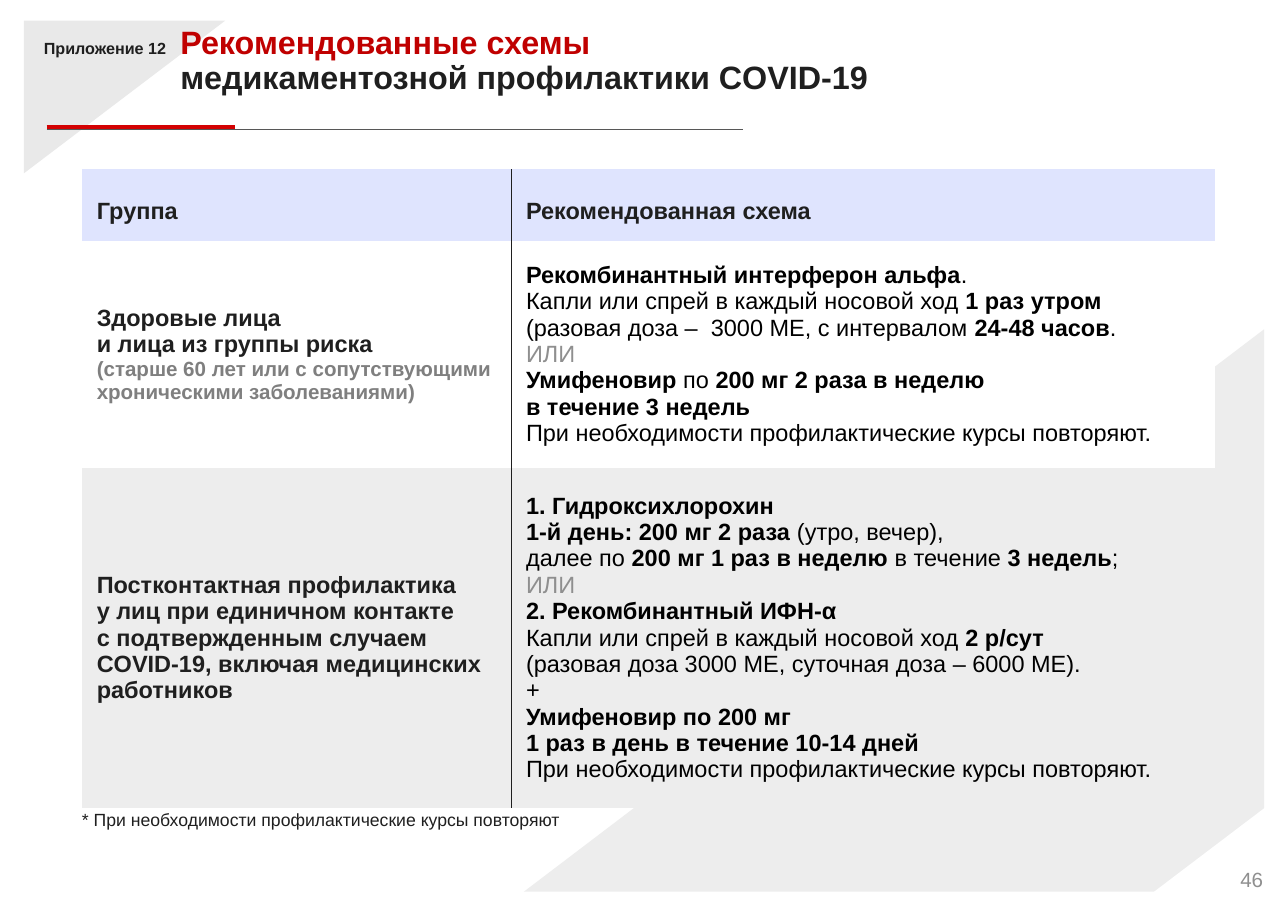
"""Builds the slide with recommended COVID-19 prophylaxis schemes."""
from dataclasses import dataclass

from lxml import etree
from pptx import Presentation
from pptx import util as u
from pptx.dml.color import RGBColor
from pptx.enum import shapes, text
from pptx.oxml.ns import qn


@dataclass(frozen=True)
class Theme:
    font: str = "Arial"
    white: str = "FFFFFF"
    panel: str = "EDEDED"
    corner: str = "E9E9E9"
    header: str = "DFE4FE"
    ink: str = "1F1F1F"
    black: str = "000000"
    muted: str = "8F8F8F"
    note: str = "7F7F7F"
    title: str = "C00000"
    accent: str = "D30102"
    rule: str = "575757"
    title_size: int = 44
    body_size: int = 32
    small_size: int = 28
    footnote_size: int = 24
    label_size: int = 22


THEME = Theme()

STYLES = {
    "title": (THEME.title_size, THEME.title, True),
    "subtitle": (THEME.title_size, THEME.ink, True),
    "label": (THEME.label_size, THEME.ink, True),
    "footnote": (THEME.footnote_size, THEME.ink, False),
    "number": (THEME.small_size, THEME.muted, False),
    "head": (THEME.body_size, THEME.ink, True),
    "note": (THEME.small_size, THEME.note, True),
    "bold": (THEME.body_size, THEME.black, True),
    "plain": (THEME.body_size, THEME.black, False),
    "or": (THEME.body_size, THEME.muted, False),
}

OR = [("ИЛИ", "or")]
REPEAT = [("При необходимости профилактические курсы повторяют.", "plain")]

HEADINGS = ["Группа", "Рекомендованная схема"]

HEALTHY_GROUP = [[
    ("Здоровые лица \nи лица из группы риска \n", "head"),
    ("(старше 60 лет или с сопутствующими хроническими заболеваниями)", "note"),
]]

HEALTHY_SCHEME = [
    [("Рекомбинантный интерферон альфа", "bold"),
     (". \nКапли или спрей в каждый носовой ход ", "plain"),
     ("1 раз утром \n", "bold"),
     ("(разовая доза –  3000 ME, с интервалом ", "plain"),
     ("24-48 часов", "bold"),
     (".", "plain")],
    OR,
    [("Умифеновир", "bold"),
     (" по ", "plain"),
     ("200 мг 2 раза в неделю \nв течение 3 недель", "bold")],
    REPEAT,
]

CONTACT_GROUP = [[
    ("Постконтактная профилактика \nу лиц при единичном контакте \n"
     "с подтвержденным случаем \nCOVID-19, включая медицинских работников", "head"),
]]

CONTACT_SCHEME = [
    [("1. Гидроксихлорохин", "bold")],
    [("1-й день: 200 мг 2 раза ", "bold"), ("(утро, вечер),", "plain")],
    [("далее по ", "plain"),
     ("200 мг 1 раз в неделю ", "bold"),
     ("в течение ", "plain"),
     ("3 недель", "bold"),
     (";", "plain")],
    OR,
    [("2. Рекомбинантный ИФН-α", "bold")],
    [("Капли или спрей в каждый носовой ход ", "plain"),
     ("2 р/сут \n", "bold"),
     ("(разовая доза 3000 ME, суточная доза – 6000 ME).", "plain")],
    [("+", "plain")],
    [("Умифеновир по 200 мг", "bold")],
    [("1 раз в день в течение 10-14 дней", "bold")],
    REPEAT,
]

ROWS = [
    (1.36, THEME.header, [[[(heading, "head")]] for heading in HEADINGS]),
    (4.26, THEME.white, [HEALTHY_GROUP, HEALTHY_SCHEME]),
    (6.4, THEME.panel, [CONTACT_GROUP, CONTACT_SCHEME]),
]


def color(value):
    return RGBColor.from_string(value)


def add_span(para, wording, style):
    size, ink, bold = STYLES[style]
    for index, line in enumerate(wording.split("\n")):
        if index:
            para.add_line_break()
        if line:
            span = para.add_run()
            span.text = line
            span.font.name = THEME.font
            span.font.size = u.Pt(size)
            span.font.bold = bold
            span.font.color.rgb = color(ink)


def fill_text(frame, paragraphs, spacing=1.0, after=0, align=text.PP_ALIGN.LEFT):
    for index, spans in enumerate(paragraphs):
        para = frame.add_paragraph() if index else frame.paragraphs[0]
        para.alignment = align
        para.line_spacing = spacing
        para.space_after = u.Pt(after)
        for wording, style in spans:
            add_span(para, wording, style)


def add_text(page, place, spans, **layout):
    box = page.shapes.add_textbox(*map(u.Inches, place))
    frame = box.text_frame
    frame.word_wrap = True
    frame.margin_left = frame.margin_top = frame.margin_right = frame.margin_bottom = 0
    fill_text(frame, [spans], **layout)


def add_triangle(page, place, rotation, fill):
    triangle = page.shapes.add_shape(
        shapes.MSO_SHAPE.RIGHT_TRIANGLE, *map(u.Inches, place))
    triangle.rotation = rotation
    triangle.shadow.inherit = False
    triangle.fill.solid()
    triangle.fill.fore_color.rgb = color(fill)
    triangle.line.fill.background()


def add_rule(page, left, right, top, ink, width):
    rule = page.shapes.add_connector(
        shapes.MSO_CONNECTOR.STRAIGHT, *map(u.Inches, (left, top, right, top)))
    rule.line.color.rgb = color(ink)
    rule.line.width = u.Pt(width)
    etree.SubElement(rule._element.spPr, qn("a:effectLst"))


def set_borders(cell, inner_side):
    properties = cell._tc.get_or_add_tcPr()
    for side in ("lnL", "lnR", "lnT", "lnB"):
        border = etree.SubElement(properties, qn(f"a:{side}"), w=str(u.Pt(1)))
        if side == inner_side:
            fill = etree.SubElement(border, qn("a:solidFill"))
            etree.SubElement(fill, qn("a:srgbClr"), val=THEME.ink)
        else:
            etree.SubElement(border, qn("a:noFill"))


def fill_cell(cell, paragraphs, fill, inner_side, **layout):
    set_borders(cell, inner_side)
    cell.fill.solid()
    cell.fill.fore_color.rgb = color(fill)
    cell.vertical_anchor = text.MSO_ANCHOR.MIDDLE
    cell.margin_left = cell.margin_right = u.Inches(0.28)
    cell.margin_top = cell.margin_bottom = u.Inches(0.28)
    fill_text(cell.text_frame, paragraphs, **layout)


def add_schemes(page):
    widths = (8.12, 13.31)
    height = sum(row[0] for row in ROWS)
    table = page.shapes.add_table(
        len(ROWS), len(widths),
        *map(u.Inches, (1.55, 3.2, sum(widths), height))).table
    table.first_row = table.horz_banding = False
    for column, width in zip(table.columns, widths):
        column.width = u.Inches(width)
    for index, (row_height, fill, contents) in enumerate(ROWS):
        table.rows[index].height = u.Inches(row_height)
        layout = {} if index else {"spacing": 1.5, "after": 0.8}
        for cell, paragraphs, side in zip(table.rows[index].cells, contents, ("lnR", "lnL")):
            fill_cell(cell, paragraphs, fill, side, **layout)


def main():
    deck = Presentation()
    deck.slide_width = u.Pt(1754)
    deck.slide_height = u.Pt(1241)
    page = deck.slides.add_slide(deck.slide_layouts[6])
    add_triangle(page, (11.59, 4.55, 10.64, 14), 270, THEME.panel)
    add_triangle(page, (0.91, -0.07, 2.89, 3.81), 90, THEME.corner)
    add_triangle(page, (21.77, 14.6, 2.23, 2.94), 270, THEME.white)
    add_text(page, (22.89, 16.4, 1, 0.47), [("46", "number")], align=text.PP_ALIGN.RIGHT)
    add_schemes(page)
    add_text(page, (3.41, 0.51, 18, 1.33),
             [("Рекомендованные схемы \n", "title"),
              ("медикаментозной профилактики COVID-19", "subtitle")], spacing=0.9)
    add_rule(page, 0.88, 14.05, 2.45, THEME.rule, 1.5)
    add_rule(page, 0.88, 4.45, 2.4, THEME.accent, 5.75)
    add_text(page, (0.83, 0.76, 2.93, 0.33), [("Приложение 12", "label")], spacing=0.9)
    add_text(page, (1.55, 15.31, 17.89, 0.9),
             [("* При необходимости профилактические курсы повторяют", "footnote")])
    deck.save("out.pptx")


if __name__ == "__main__":
    main()
